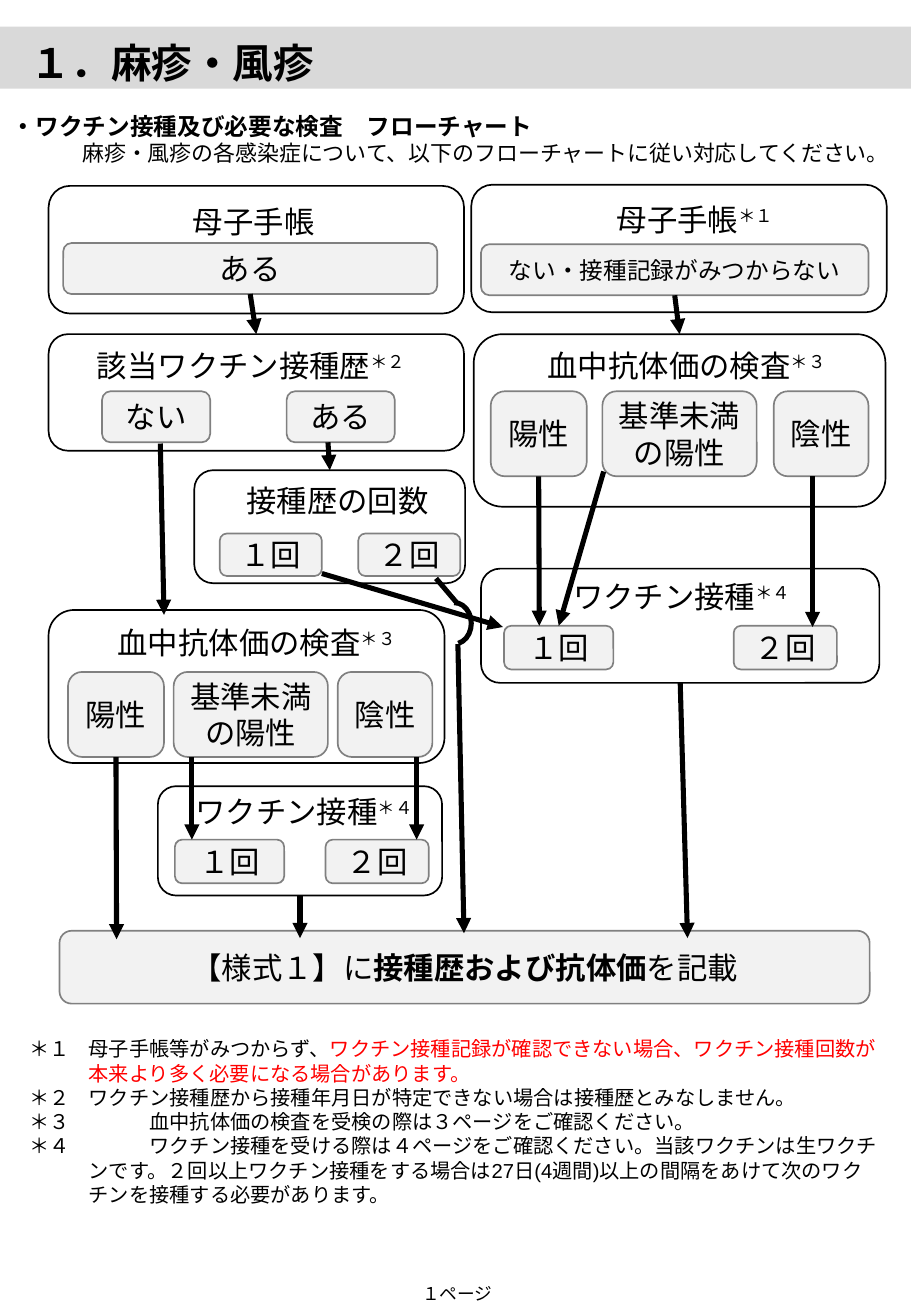
from dataclasses import dataclass
from pptx import Presentation, util as u
from pptx.dml.color import RGBColor
from pptx.enum import lang, shapes, text
from pptx.oxml.ns import qn
from lxml import etree

PX = 9144  # 100 px to the inch
PAGE = (750, 1083)


@dataclass(frozen=True)
class Theme:
    font: str = "Arial"
    ink: str = "000000"
    alert: str = "FF0000"
    paper: str = "FFFFFF"
    band: str = "D9D9D9"
    chip: str = "F2F2F2"
    chip_edge: str = "808080"
    title: float = 24
    step: float = 18
    section: float = 14
    lead: float = 13
    note: float = 12
    footer: float = 10.5


THEME = Theme()

# Content: boxes are (left, top, width, height)
BAND = (-12, 22, 792, 51)
TITLE = ("１．麻疹・風疹", (15, 26, 576, 50))
SECTION = "・ワクチン接種及び必要な検査　フローチャート"
LEAD = "麻疹・風疹の各感染症について、以下のフローチャートに従い対応してください。"
INTRO_BOX, LEAD_INDENT = (0, 87, 737, 56), 58
NOTES_BOX, NOTE_INDENT = (14, 848, 721, 151), 49
NOTES = [
    [("＊１\t母子手帳等がみつからず、", {}),
     ("ワクチン接種記録が確認できない場合、ワクチン接種回数が"
      "本来より多く必要になる場合があります。", {"color": THEME.alert})],
    [("＊２\tワクチン接種歴から接種年月日が特定できない場合は接種歴とみなしません。", {})],
    [("＊３\t\t血中抗体価の検査を受検の際は３ページをご確認ください。", {})],
    [("＊４\t\tワクチン接種を受ける際は４ページをご確認ください。当該ワクチンは生ワクチンです。"
      "２回以上ワクチン接種をする場合は27日(4週間)以上の間隔をあけて次のワクチンを接種する必要があります。", {})],
]
FOOTER = ("１ページ", (266, 1051, 221, 28))

# name: panel box, heading, heading (left, top, width), chip row (top, height), chips (text, left, width)
PANELS = {
    "book": ((40, 153, 342, 105), "母子手帳", (149, 162, 125), (200, 42), [("ある", 52, 308)]),
    "no book": ((388, 152, 342, 105), "母子手帳＊１", (498, 161, 154), (201, 42),
                [("ない・接種記録がみつからない", 396, 319)]),
    "history": ((40, 275, 342, 96), "該当ワクチン接種歴＊２", (70, 281, 287), (322, 42),
                [("ない", 84, 89), ("ある", 236, 89)]),
    "right test": ((390, 275, 339, 142), "血中抗体価の検査＊３", (441, 281, 268), (322, 70),
                   [("陽性", 404, 79), ("基準未満の陽性", 496, 127), ("陰性", 637, 78)]),
    "count": ((160, 387, 223, 93), "接種歴の回数", (193, 392, 176), (439, 35),
              [("１回", 181, 84), ("２回", 295, 84)]),
    "right shots": ((396, 468, 328, 94), "ワクチン接種＊４", (462, 471, 212), (515, 36),
                    [("１回", 415, 90), ("２回", 604, 85)]),
    "left test": ((40, 502, 326, 126), "血中抗体価の検査＊３", (87, 509, 274), (553, 70),
                  [("陽性", 56, 79), ("基準未満の陽性", 143, 127), ("陰性", 278, 78)]),
    "left shots": ((130, 647, 234, 90), "ワクチン接種＊４", (151, 648, 212), (691, 36),
                   [("１回", 144, 90), ("２回", 268, 85)]),
}
SMALL_CHIP = "ない・接種記録がみつからない"
RECORD = ([("【様式１】に", {}), ("接種歴および抗体価", {"bold": True}), ("を記載", {})],
          (49, 766, 667, 60))

# Ends are points, or (node, side) where the line joins the middle of a side
TOP, BOTTOM = 0, 2
ARROWS = [
    (("book/ある", BOTTOM), ("history", TOP)),
    ((f"no book/{SMALL_CHIP}", BOTTOM), ("right test", TOP)),
    ((270, 364), ("count", TOP)),
    ((132, 365), (135, 506)),
    (("right test/陽性", BOTTOM), (444, 515)),
    ((497, 388), (460, 515)),
    ((669, 392), (669, 516)),
    ((265, 472), (414, 516)),
    (("right shots", BOTTOM), (566, 772)),
    (("left test/陽性", BOTTOM), (96, 773)),
    ((158, 623), (158, 691)),
    ((343, 623), (343, 691)),
    (("left shots", BOTTOM), (247, 772)),
    ((377, 530), (382, 768)),
]
BRIDGE_START = ((376, 496), (359, 476))
BRIDGE_ARC, ARC_ANGLES = (360, 496, 28, 34), (162, 47.06)

deck = Presentation()
deck.slide_width, deck.slide_height = (side * PX for side in PAGE)
page = deck.slides.add_slide(deck.slide_layouts[1])
nodes = {}


def emu(box):
    return [length * PX for length in box]


def apply(target, values):
    for name, value in values.items():
        setattr(target, name, value)


def write(para, spans, size, align=text.PP_ALIGN.LEFT, **defaults):
    apply(para, {"alignment": align, "space_before": u.Pt(0)})
    for words, changes in spans:
        style = {"color": THEME.ink, "bold": False, "raised": False, **defaults, **changes}
        span = para.add_run()
        span.text = words
        apply(span.font, {"name": THEME.font, "size": u.Pt(size), "bold": style["bold"],
                          "language_id": lang.MSO_LANGUAGE_ID.JAPANESE})
        span.font.color.rgb = RGBColor.from_string(style["color"])
        props = span._r.get_or_add_rPr()
        etree.SubElement(props, qn("a:ea"), typeface=THEME.font)
        if style["raised"]:
            props.set("baseline", "30000")


def indent(para, left, first):
    props = para._p.get_or_add_pPr()
    props.set("marL", str(left * PX))
    props.set("indent", str(first * PX))
    etree.SubElement(props, qn("a:buNone"))
    stops = etree.SubElement(props, qn("a:tabLst"))
    etree.SubElement(stops, qn("a:tab"), pos=str(left * PX), algn="l")


def frame(shape, box, anchor=text.MSO_ANCHOR.TOP):
    apply(shape, dict(zip(("left", "top", "width", "height"), emu(box))))
    apply(shape.text_frame, {"word_wrap": True, "auto_size": text.MSO_AUTO_SIZE.NONE,
                             "vertical_anchor": anchor})
    return shape.text_frame


def label(box, spans, size, **style):
    body = frame(page.shapes.add_textbox(*emu(box)), box)
    write(body.paragraphs[0], spans, size, **style)
    return body


def block(kind, box, fill=None, edge=None, weight=1):
    shape = page.shapes.add_shape(kind, *emu(box))
    shape.shadow.inherit = False
    for paint, color in ((shape.fill, fill), (shape.line.fill, edge)):
        if color:
            paint.solid()
            paint.fore_color.rgb = RGBColor.from_string(color)
        else:
            paint.background()
    if edge:
        shape.line.width = u.Pt(weight)
    return shape


def chip(box, spans, size):
    shape = block(shapes.MSO_SHAPE.ROUNDED_RECTANGLE, box, THEME.chip, THEME.chip_edge)
    body = frame(shape, box, text.MSO_ANCHOR.MIDDLE)
    apply(body, {"margin_left": 5 * PX, "margin_right": 5 * PX})
    write(body.paragraphs[0], spans, size, text.PP_ALIGN.CENTER)
    return shape


def connect(start, end, head=True):
    joints = [isinstance(point[0], str) for point in (start, end)]
    ends = [(0, 0) if joint else point for joint, point in zip(joints, (start, end))]
    line = page.shapes.add_connector(shapes.MSO_CONNECTOR.STRAIGHT, *emu(ends[0] + ends[1]))
    for joint, point, join in zip(joints, (start, end), (line.begin_connect, line.end_connect)):
        if joint:
            join(nodes[point[0]], point[1])
    line.line.width = u.Pt(3)
    line.line.color.rgb = RGBColor.from_string(THEME.ink)
    if head:
        etree.SubElement(line.line._get_or_add_ln(), qn("a:tailEnd"), type="triangle")
    etree.SubElement(line._element.spPr, qn("a:effectLst"))


# Title on its band
band = block(shapes.MSO_SHAPE.RECTANGLE, BAND, THEME.band)
page.shapes._spTree.insert(2, band._element)
heading, title_box = TITLE
write(frame(page.shapes.title, title_box).paragraphs[0], [(heading, {})], THEME.title, bold=True)

# Introduction, notes and page number
intro = label(INTRO_BOX, [(SECTION, {})], THEME.section, bold=True)
lead = intro.add_paragraph()
write(lead, [(LEAD, {})], THEME.lead)
indent(lead, LEAD_INDENT, 0)
notes = frame(page.placeholders[1], NOTES_BOX)
for index, spans in enumerate(NOTES):
    para = notes.add_paragraph() if index else notes.paragraphs[0]
    write(para, spans, THEME.note)
    indent(para, NOTE_INDENT, -NOTE_INDENT)
label(FOOTER[1], [(FOOTER[0], {})], THEME.footer, align=text.PP_ALIGN.CENTER)

# Flowchart panels with their headings and chips
for name, (box, heading, place, (top, height), chips) in PANELS.items():
    nodes[name] = block(shapes.MSO_SHAPE.ROUNDED_RECTANGLE, box, THEME.paper, THEME.ink)
    words, star, number = heading.partition("＊")
    label((*place, 40), [(words, {})] + ([(star + number, {"raised": True})] if star else []), THEME.step)
    for words, left, width in chips:
        size = THEME.section if words == SMALL_CHIP else THEME.step
        nodes[f"{name}/{words}"] = chip((left, top, width, height), [(words, {})], size)
chip(RECORD[1], RECORD[0], THEME.step)

# Arrows, and the bridge over the crossing one
for start, end in ARROWS:
    connect(start, end)
connect(*BRIDGE_START, head=False)
arc = block(shapes.MSO_SHAPE.ARC, BRIDGE_ARC, edge=THEME.ink, weight=3)
for index, angle in enumerate(ARC_ANGLES):
    arc.adjustments[index] = angle

deck.save("out.pptx")
